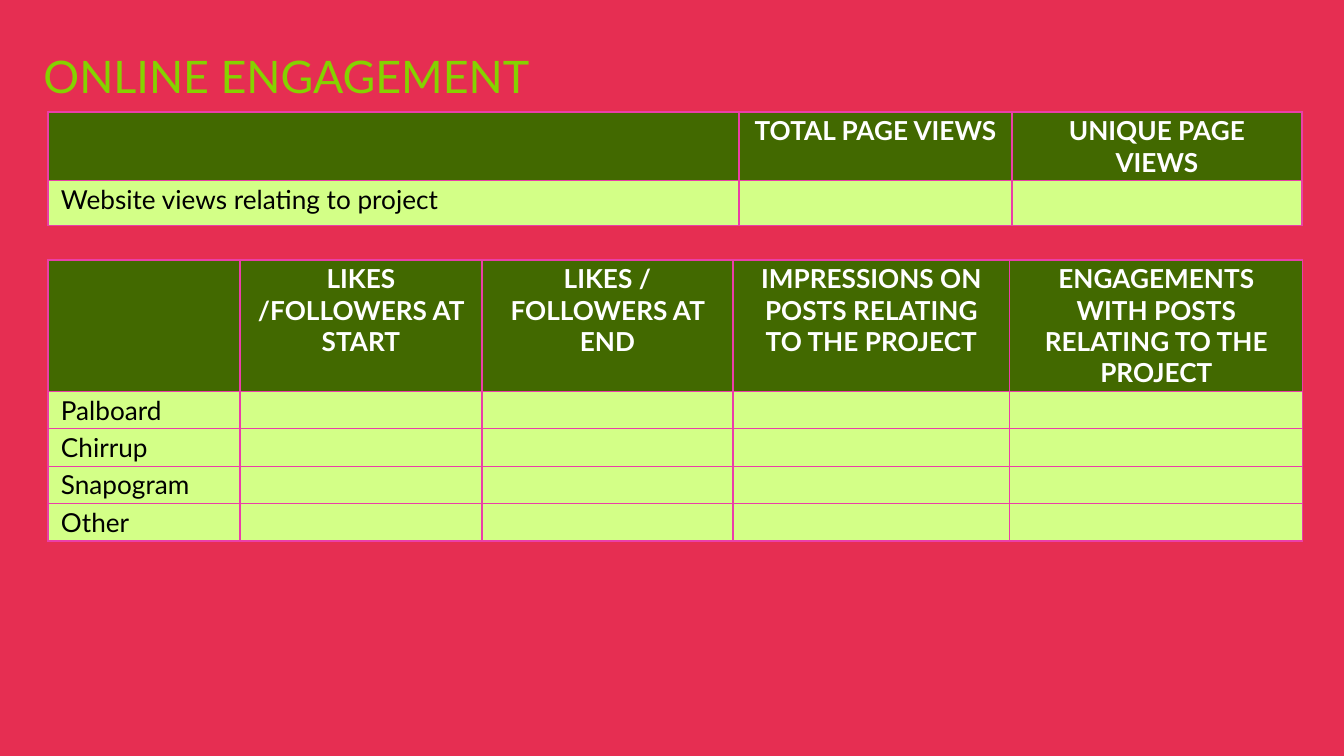
from lxml.etree import SubElement
from pptx import Presentation
from pptx.dml.color import RGBColor
from pptx.enum.text import MSO_ANCHOR, PP_ALIGN
from pptx.oxml import parse_xml
from pptx.oxml.ns import nsdecls, qn
from pptx.util import Emu, Pt

RED = RGBColor(0xE6, 0x2E, 0x52)
LIME = RGBColor(0x85, 0xD2, 0x00)
GREEN = RGBColor(0x42, 0x69, 0x00)
PALE = RGBColor(0xD3, 0xFF, 0x87)
PINK = RGBColor(0xEB, 0x3E, 0xA8)
WHITE = RGBColor(0xFF, 0xFF, 0xFF)
BLACK = RGBColor(0x00, 0x00, 0x00)
SCALE = 914400 / 134.4


def px(n):
    """Turn px into EMU."""
    return Emu(round(n * SCALE))


class Deck:
    """Holds the style and the current slide."""

    font = "Lato"
    size = 14

    def __init__(self, wide, high):
        """Start a deck with one title-only slide."""
        self.deck = Presentation()
        self.deck.slide_width, self.deck.slide_height = px(wide), px(high)
        self.slide = self.deck.slides.add_slide(self.deck.slide_layouts[5])
        fill = self.slide.background.fill
        fill.solid()
        fill.fore_color.rgb = RED

    def style(self, para, size, color, bold=False, align=PP_ALIGN.LEFT):
        """Set the font and alignment of a paragraph."""
        para.alignment = align
        font = para.font
        font.name, font.size, font.bold = self.font, Pt(size), bold
        font.color.rgb = color

    def title(self, text, left, top, wide, high):
        """Place and format the title."""
        box = self.slide.shapes.title
        box.left, box.top, box.width, box.height = map(px, (left, top, wide, high))
        frame = box.text_frame
        frame.text = text
        frame.vertical_anchor = MSO_ANCHOR.MIDDLE
        self.style(frame.paragraphs[0], 24, LIME)

    def border(self, cell):
        """Draw a thin line on all four sides of a cell."""
        props = cell._tc.get_or_add_tcPr()
        for i, side in enumerate("LRTB"):
            props.insert(i, parse_xml(
                f'<a:ln{side} {nsdecls("a")} w="{Pt(0.75)}"><a:solidFill>'
                f'<a:srgbClr val="{PINK}"/></a:solidFill></a:ln{side}>'))

    def cell(self, cell, text, head):
        """Fill, frame and write one cell."""
        cell.fill.solid()
        cell.fill.fore_color.rgb = GREEN if head else PALE
        self.border(cell)
        cell.margin_left = cell.margin_right = px(13)
        cell.margin_top = cell.margin_bottom = px(3)
        cell.text = text
        para = cell.text_frame.paragraphs[0]
        self.style(para, self.size, WHITE if head else BLACK, head,
                   PP_ALIGN.CENTER if head else PP_ALIGN.LEFT)
        if not text:
            SubElement(para._p, qn("a:endParaRPr"), sz=str(self.size * 100))

    def table(self, left, top, cols, rows, heads, names):
        """Add a table with a header row and named empty rows."""
        grid = self.slide.shapes.add_table(
            len(rows), len(cols), px(left), px(top), px(sum(cols)), px(sum(rows))).table
        for col, wide in zip(grid.columns, cols):
            col.width = px(wide)
        for row, high in zip(grid.rows, rows):
            row.height = px(high)
        blank = [""] * (len(cols) - 1)
        lines = [["", *heads]] + [[name, *blank] for name in names]
        for r, line in enumerate(lines):
            for c, text in enumerate(line):
                self.cell(grid.cell(r, c), text, r == 0)

    def save(self):
        """Write the file."""
        self.deck.save("out.pptx")


def main():
    """Build the slide."""
    deck = Deck(1344, 756)
    deck.title("ONLINE ENGAGEMENT", 30, 42, 1208, 67)
    deck.table(48, 112, [691, 273, 290], [68, 45],
               ["TOTAL PAGE VIEWS", "UNIQUE PAGE VIEWS"],
               ["Website views relating to project"])
    deck.table(48, 260, [192, 242, 251, 277, 293], [131] + [37] * 4,
               ["LIKES /FOLLOWERS AT START", "LIKES / FOLLOWERS AT END",
                "IMPRESSIONS ON POSTS RELATING TO THE PROJECT",
                "ENGAGEMENTS WITH POSTS RELATING TO THE PROJECT"],
               ["Palboard", "Chirrup", "Snapogram", "Other"])
    deck.save()


if __name__ == "__main__":
    main()
